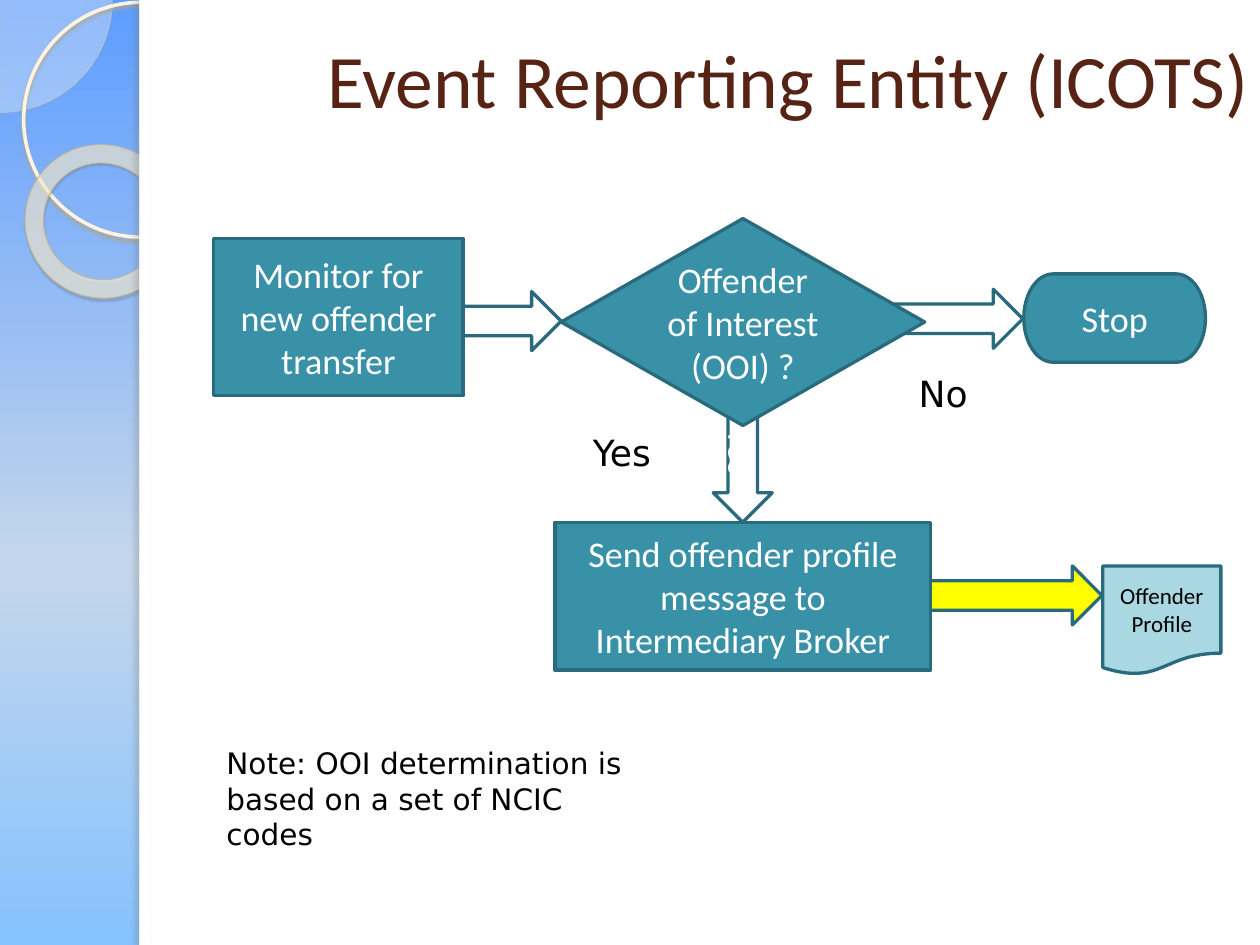
from dataclasses import dataclass

from lxml import etree
from pptx import Presentation
from pptx.dml.color import RGBColor
from pptx.enum.shapes import MSO_SHAPE as SHAPE
from pptx.enum.text import MSO_ANCHOR as ANCHOR, MSO_AUTO_SIZE as AUTO, PP_ALIGN as ALIGN
from pptx.oxml.ns import qn
from pptx.util import Cm, Pt


@dataclass(frozen=True)
class Theme:
    box: str = "3891A7"
    edge: str = "296B7C"
    document: str = "A9D7E2"
    highlight: str = "FFFF00"
    title: str = "572314"
    white: str = "FFFFFF"
    black: str = "000000"
    sky: tuple = ((0, "5E9EFF"), (60, "C4D6EB"), (100, "85C2FF"))
    head: str = "Calibri"
    body: str = "DejaVu Sans"
    title_size: int = 46
    step_size: int = 22
    note_size: int = 18
    small_size: int = 14


T = Theme()
W, H = 27.1, 20.32
PANEL_X = 3
ARROW_H = 1.27

prs = Presentation()
prs.slide_width, prs.slide_height = Cm(W), Cm(H)
s = prs.slides.add_slide(prs.slide_layouts[6])


def draw(kind, box, fill=None, alpha=100, line=None, width=2, shadow=None):
    """Add a shape; box is in cm, shadow is (colour, alpha %, blur pt, distance pt, degrees)."""
    sp = s.shapes.add_shape(kind, *map(Cm, box))
    sp.shadow.inherit = False
    if fill:
        sp.fill.solid()
        sp.fill.fore_color.rgb = RGBColor.from_string(fill)
        if alpha < 100:
            clr = sp.fill._xPr.find(qn("a:solidFill"))[0]
            etree.SubElement(clr, qn("a:alpha"), val=str(alpha * 1000))
    else:
        sp.fill.background()
    if line:
        sp.line.color.rgb = RGBColor.from_string(line)
        sp.line.width = Pt(width)
    else:
        sp.line.fill.background()
    if shadow:
        color, opacity, blur, dist, angle = shadow
        effects = sp._element.spPr.find(qn("a:effectLst"))
        outer = etree.SubElement(effects, qn("a:outerShdw"), blurRad=str(Pt(blur)),
                                 dist=str(Pt(dist)), dir=str(angle * 60000), rotWithShape="0")
        clr = etree.SubElement(outer, qn("a:srgbClr"), val=color)
        etree.SubElement(clr, qn("a:alpha"), val=str(opacity * 1000))
    return sp


def write(sp, text, size=T.step_size, font=T.head, color=T.white,
          align=ALIGN.CENTER, anchor=ANCHOR.MIDDLE, grow=False):
    tf = sp.text_frame
    tf.word_wrap = True
    tf.vertical_anchor = anchor
    if grow:
        tf.auto_size = AUTO.SHAPE_TO_FIT_TEXT
    p = tf.paragraphs[0]
    p.alignment = align
    r = p.add_run()
    r.text = text
    r.font.name, r.font.size = font, Pt(size)
    r.font.color.rgb = RGBColor.from_string(color)


# Sky background
bg = s.background.fill
bg.gradient()
bg.gradient_angle = 270
stops = bg._xPr.find(qn("a:gradFill")).find(qn("a:gsLst"))
for stop in list(stops):
    stops.remove(stop)
for pos, color in T.sky:
    stop = etree.SubElement(stops, qn("a:gs"), pos=str(pos * 1000))
    etree.SubElement(stop, qn("a:srgbClr"), val=color)

# Sidebar rings and the white panel that trims them
pie = draw(SHAPE.PIE, (-2.42, -2.42, 4.84, 4.84), "FEFAF4", 33, "D3C39F", 0.25)
pie.adjustments[0], pie.adjustments[1] = 0, 54
draw(SHAPE.OVAL, (0.51, 0.05, 5.05, 5.05), line="FFF5DE", width=2.15,
     shadow=("B0A68F", 85, 2, 2, 90))
ring = draw(SHAPE.DONUT, (0.53, 3.12, 3.33, 3.28), "FFF6DE", 60, "C7B893", 0.58,
            ("5A5444", 35, 1, 1.2, 75))
ring.adjustments[0] = 0.12
ring.rotation = 38.6
draw(SHAPE.RECTANGLE, (PANEL_X, 0, W - PANEL_X, H), T.white)
draw(SHAPE.RECTANGLE, (PANEL_X, 0, 0.23, H), T.white, shadow=("736F63", 25, 3, 3, 180))

# Block arrows, behind the steps
for x, y, length, fill, turn, label in (
    (19.51, 12.17, 4.19, T.highlight, 0, None),
    (14.63, 9.25, 2.69, None, 90, "Yes"),
    (19.1, 6.22, 2.9, None, 0, None),
    (9.96, 6.27, 2.11, None, 0, None),
):
    arrow = draw(SHAPE.RIGHT_ARROW, (x, y, length, ARROW_H), fill, line=T.edge)
    arrow.rotation = turn
    if label:
        write(arrow, label)

# Flowchart steps
for kind, box, text in (
    (SHAPE.FLOWCHART_PROCESS, (4.6, 5.13, 5.36, 3.38), "Monitor for new offender transfer"),
    (SHAPE.FLOWCHART_DECISION, (12.07, 4.7, 7.82, 4.45), "Offender of Interest (OOI) ?"),
    (SHAPE.FLOWCHART_TERMINATOR, (22.02, 5.89, 3.91, 1.9), "Stop"),
    (SHAPE.FLOWCHART_PROCESS, (11.94, 11.23, 8.08, 3.18),
     "Send offender profile message to Intermediary Broker"),
):
    write(draw(kind, box, T.box, line=T.edge), text)
profile = draw(SHAPE.FLOWCHART_DOCUMENT, (23.72, 12.17, 2.54, 2.34), T.document, line=T.edge)
write(profile, "Offender Profile", T.small_size, color=T.black)

# Title, branch labels and note
title = s.shapes.add_textbox(Cm(5.49), Cm(0), Cm(21.61), Cm(3.38))
write(title, "Event Reporting Entity (ICOTS)", T.title_size, color=T.title, align=ALIGN.RIGHT)
for box, text, size in (
    ((19.51, 7.87, 1.98, 1.19), "No", T.step_size),
    ((12.5, 9.14, 1.98, 1.19), "Yes", T.step_size),
    ((4.62, 15.9, 9.17, 2.57), "Note: OOI determination is based on a set of NCIC codes",
     T.note_size),
):
    write(s.shapes.add_textbox(*map(Cm, box)), text, size, T.body, T.black,
          ALIGN.LEFT, ANCHOR.TOP, grow=True)

prs.save("out.pptx")
